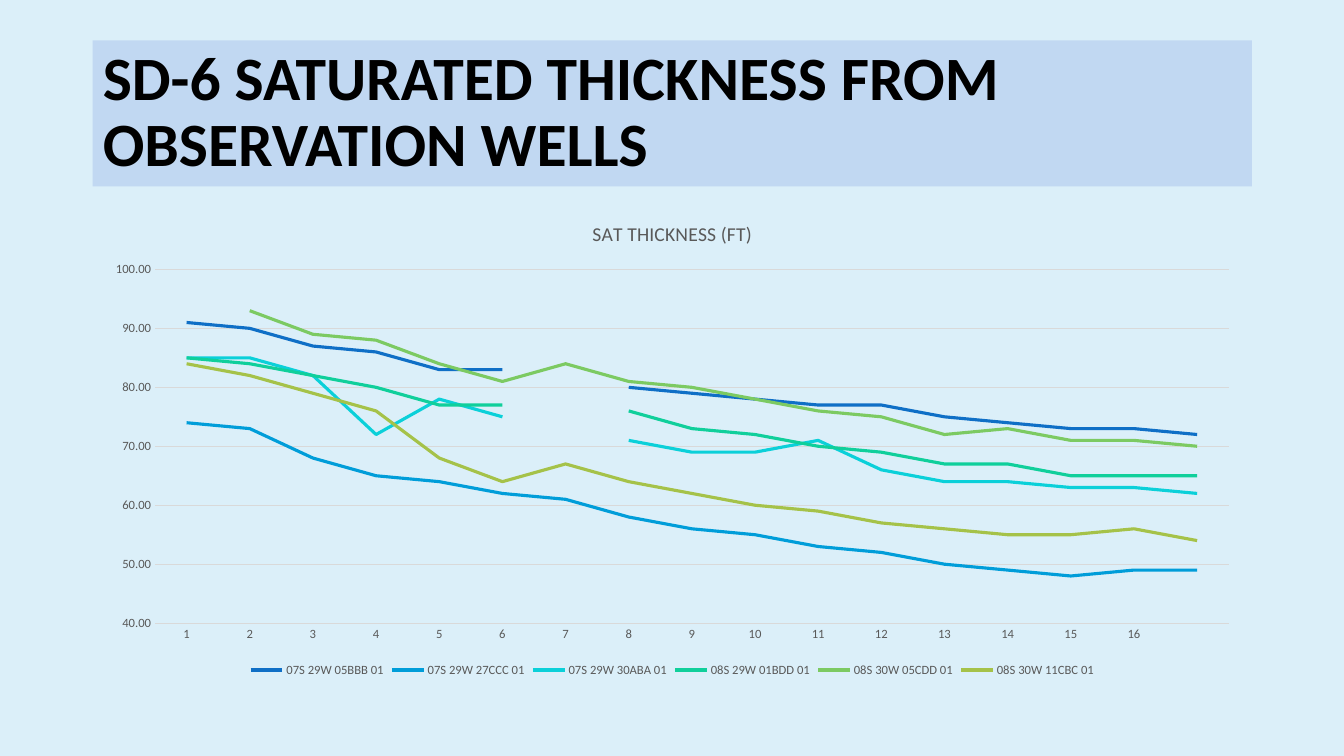
import pptx
import pptx.util
import pptx.dml.color
import pptx.chart.data
import pptx.enum.chart
import pptx.enum.text

Pt = pptx.util.Pt
enum = pptx.enum.chart


def tint(code):
    return pptx.dml.color.RGBColor.from_string(code)


def style(font, size, code, bold=False):
    look = {"name": "Calibri", "size": Pt(size), "bold": bold}
    for key, value in look.items():
        setattr(font, key, value)
    font.color.rgb = tint(code)


# Slide and background
deck = pptx.Presentation()
deck.slide_width = wide = pptx.util.Inches(13.33)
deck.slide_height = high = pptx.util.Inches(7.5)
slide = deck.slides.add_slide(deck.slide_layouts[5])
slide.background.fill.solid()
slide.background.fill.fore_color.rgb = tint("DBEFF9")

# Both parts share one column, given as shares of the slide
left, span = int(wide * 0.069), int(wide * 0.8625)

# Title
title = slide.shapes.title
place = {"left": left, "top": int(high * 0.0533),
         "width": span, "height": int(high * 0.1933)}
for key, value in place.items():
    setattr(title, key, value)
title.fill.solid()
title.fill.fore_color.rgb = tint("C1D8F2")
frame = title.text_frame
frame.text = "SD-6 SATURATED THICKNESS FROM\vOBSERVATION WELLS"
frame.word_wrap = True
frame.vertical_anchor = pptx.enum.text.MSO_ANCHOR.MIDDLE
head = frame.paragraphs[0]
head.alignment = pptx.enum.text.PP_ALIGN.LEFT
head.line_spacing = 0.9
for run in head.runs:
    style(run.font, 44, "000000", True)

# Well readings: name, line colour, values by year
wells = [
    ("07S 29W 05BBB 01", "0F6FC6",
     [91, 90, 87, 86, 83, 83, None, 80, 79, 78, 77, 77, 75, 74, 73, 73, 72]),
    ("07S 29W 27CCC 01", "009DD9",
     [74, 73, 68, 65, 64, 62, 61, 58, 56, 55, 53, 52, 50, 49, 48, 49, 49]),
    ("07S 29W 30ABA 01", "0BD0D9",
     [85, 85, 82, 72, 78, 75, None, 71, 69, 69, 71, 66, 64, 64, 63, 63, 62]),
    ("08S 29W 01BDD 01", "10CF9B",
     [85, 84, 82, 80, 77, 77, None, 76, 73, 72, 70, 69, 67, 67, 65, 65, 65]),
    ("08S 30W 05CDD 01", "7CCA62",
     [None, 93, 89, 88, 84, 81, 84, 81, 80, 78, 76, 75, 72, 73, 71, 71, 70]),
    ("08S 30W 11CBC 01", "A5C249",
     [84, 82, 79, 76, 68, 64, 67, 64, 62, 60, 59, 57, 56, 55, 55, 56, 54]),
]
data = pptx.chart.data.CategoryChartData(number_format="0.00")
# The last point has no label
data.categories = [str(n) for n in range(1, 17)] + [""]
for name, code, vals in wells:
    data.add_series(name, vals)

# Chart
chart = slide.shapes.add_chart(
    enum.XL_CHART_TYPE.LINE, left, int(high * 0.2667),
    span, int(high * 0.6347), data).chart
style(chart.font, 10, "000000")
chart.has_title = True
chart.chart_title.include_in_layout = False
label = chart.chart_title.text_frame
label.text = "SAT THICKNESS (FT)"
style(label.paragraphs[0].runs[0].font, 14, "595959")

# Series lines
plot = chart.plots[0]
plot.vary_by_categories = False
for line, (name, code, vals) in zip(plot.series, wells):
    line.smooth = False
    line.marker.style = enum.XL_MARKER_STYLE.NONE
    line.format.line.width = Pt(2.25)
    line.format.line.color.rgb = tint(code)

# Axes
base, scale = chart.category_axis, chart.value_axis
for axis in (base, scale):
    axis.major_tick_mark = axis.minor_tick_mark = enum.XL_TICK_MARK.NONE
    style(axis.tick_labels.font, 9, "595959")
limits = {"minimum_scale": 40, "maximum_scale": 100, "major_unit": 10,
          "has_major_gridlines": True}
for key, value in limits.items():
    setattr(scale, key, value)
scale.tick_labels.number_format = "0.00"
scale.tick_labels.number_format_is_linked = False
scale.format.line.fill.background()
for rule in (base.format.line, scale.major_gridlines.format.line):
    rule.width = Pt(0.75)
    rule.color.rgb = tint("D9D9D9")

# Legend
chart.has_legend = True
chart.legend.position = enum.XL_LEGEND_POSITION.BOTTOM
chart.legend.include_in_layout = False
style(chart.legend.font, 9, "595959")

deck.save("out.pptx")
